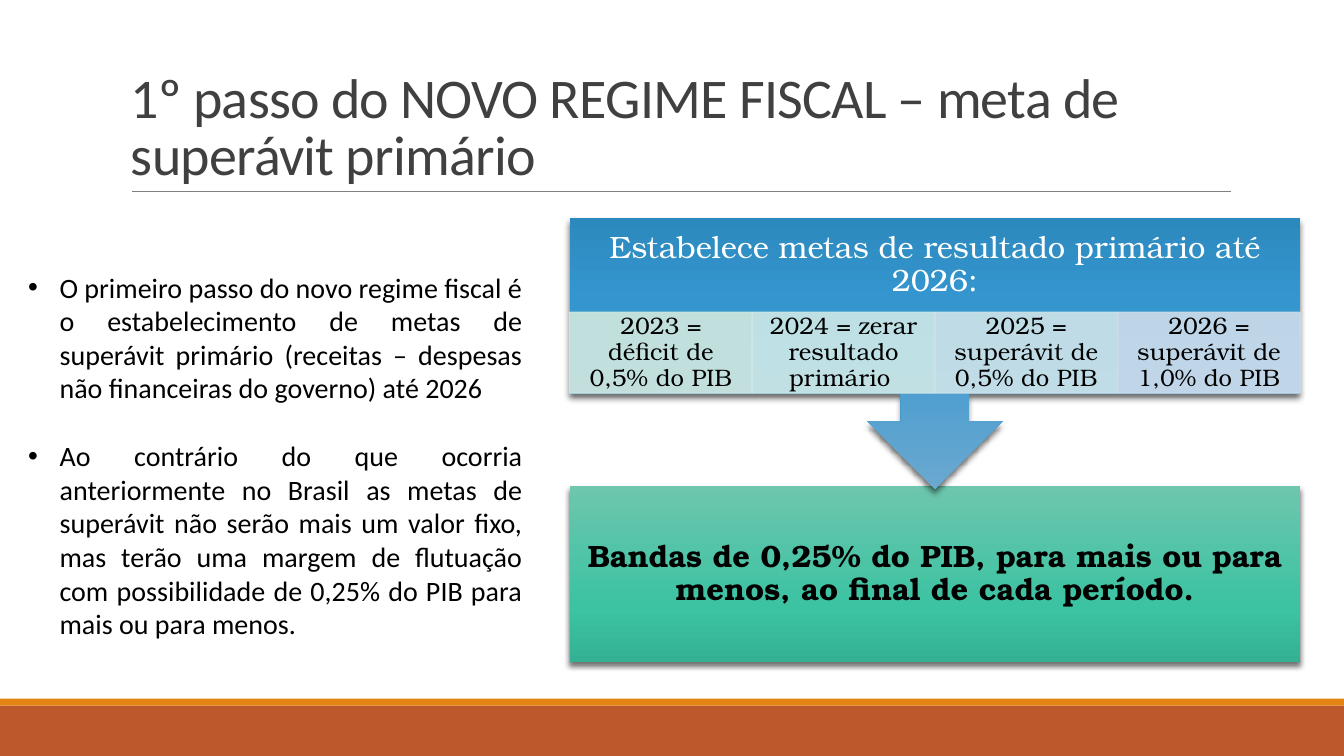
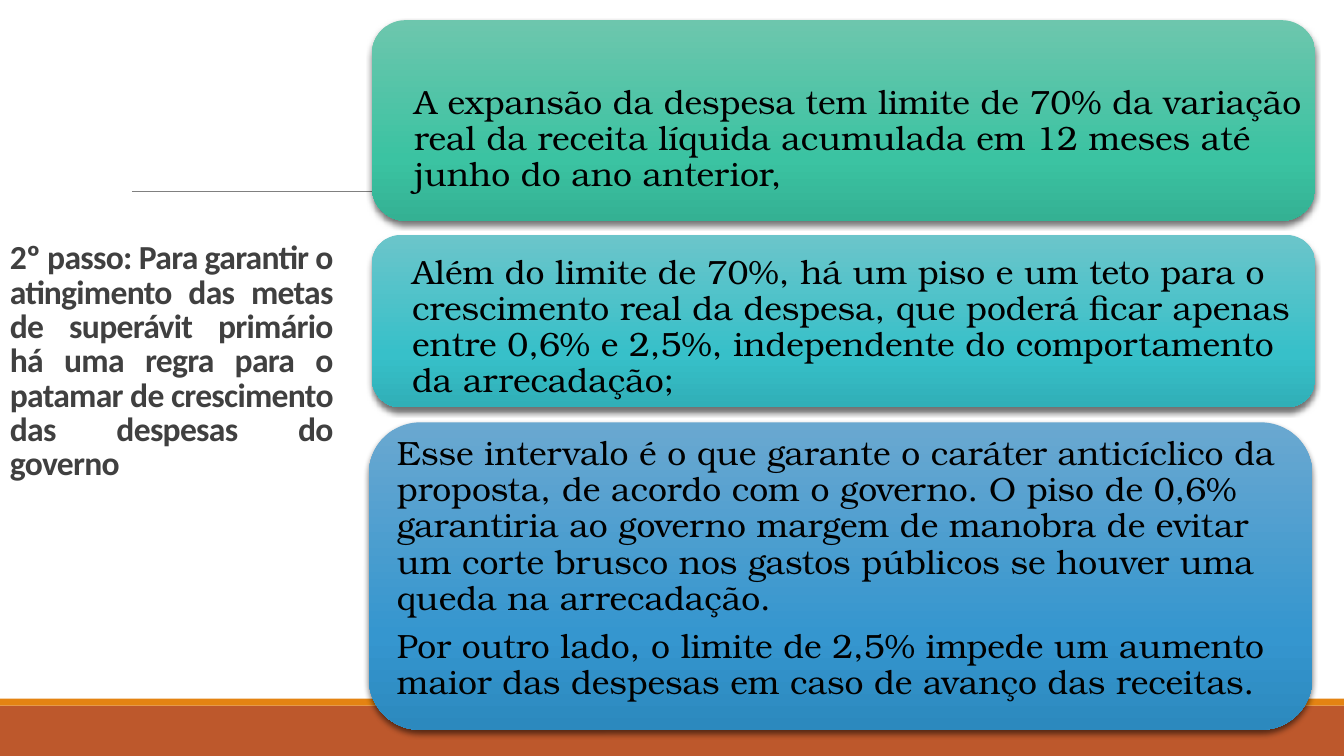
from dataclasses import dataclass

from lxml.etree import SubElement
from pptx import Presentation
from pptx.dml.color import RGBColor
from pptx.enum.shapes import MSO_CONNECTOR, MSO_SHAPE
from pptx.enum.text import MSO_ANCHOR, PP_ALIGN
from pptx.oxml import parse_xml
from pptx.oxml.ns import nsdecls, qn
from pptx.presentation import Presentation as Deck
from pptx.shapes.autoshape import Shape
from pptx.slide import Slide
from pptx.util import Pt

BODY_FONT = "Calibri"
DIAGRAM_FONT = "TeX Gyre Bonum"

BLACK = RGBColor(0x00, 0x00, 0x00)
WHITE = RGBColor(0xFF, 0xFF, 0xFF)
TITLE_GREY = RGBColor(0x40, 0x40, 0x40)
RULE_GREY = RGBColor(0x80, 0x80, 0x80)
BAND_RUST = RGBColor(0xBD, 0x58, 0x2C)
BAND_ORANGE = RGBColor(0xE4, 0x83, 0x12)

PAGE_WIDTH, PAGE_HEIGHT = 960, 540
GOAL_OPACITY = 90
TEXT_INSETS = (7.2, 3.6, 7.2, 3.6)
PANEL_INSETS = (7.2, 7.2, 7.2, 7.2)
HEADING_INSETS = (12, 12, 12, 12)
GOAL_INSETS = (9.2, 1.5, 9.2, 1.5)

Stops = tuple[tuple[int, RGBColor], ...]


def shaded(light: RGBColor, middle: RGBColor, dark: RGBColor) -> Stops:
    return (0, light), (69, middle), (100, dark)


GREEN = shaded(RGBColor(0x6D, 0xC6, 0xAD), RGBColor(0x3B, 0xC3, 0xA2), RGBColor(0x34, 0xB1, 0x93))
TEAL = shaded(RGBColor(0x6B, 0xC5, 0xCA), RGBColor(0x37, 0xC0, 0xC9), RGBColor(0x30, 0xAF, 0xB7))
BLUE = shaded(RGBColor(0x6A, 0xA8, 0xD0), RGBColor(0x35, 0x96, 0xCF), RGBColor(0x2C, 0x89, 0xBE))
BLUE_UPWARD = tuple((100 - position, color) for position, color in reversed(BLUE))


@dataclass(frozen=True)
class Box:
    left: float
    top: float
    width: float
    height: float


@dataclass(frozen=True)
class Goal:
    text: str
    color: RGBColor


@dataclass(frozen=True)
class Panel:
    frame: Box
    text_frame: Box
    stops: Stops
    texts: tuple[str, ...]


GOALS = (
    Goal("2023 = déficit de 0,5% do PIB", RGBColor(0xCF, 0xE7, 0xDF)),
    Goal("2024 = zerar resultado primário ", RGBColor(0xCD, 0xE8, 0xE7)),
    Goal("2025 = superávit de 0,5% do PIB", RGBColor(0xCD, 0xE3, 0xE9)),
    Goal("2026 = superávit de 1,0% do PIB", RGBColor(0xCD, 0xDC, 0xEB)),
)

STEP_NOTES = (
    "O primeiro passo do novo regime fiscal é o estabelecimento de metas de superávit "
    "primário (receitas – despesas não financeiras do governo) até 2026",
    "Ao contrário do que ocorria anteriormente no Brasil as metas de superávit não serão "
    "mais um valor fixo, mas terão uma margem de flutuação com possibilidade de 0,25% do "
    "PIB para mais ou para menos.",
)

PANELS = (
    Panel(
        Box(265.7, 14.4, 673.9, 143.3), Box(288.7, 35.3, 659.5, 128.9), GREEN,
        ("A expansão da despesa tem limite de 70% da variação real da receita líquida "
         "acumulada em 12 meses até junho do ano anterior,",),
    ),
    Panel(
        Box(265.7, 167.8, 673.9, 123.1), Box(287.3, 178.6, 661.7, 110.9), TEAL,
        ("Além do limite de 70%, há um piso e um teto para o crescimento real da despesa, "
         "que poderá ficar apenas entre 0,6% e 2,5%, independente do comportamento da "
         "arrecadação;",),
    ),
    Panel(
        Box(263.5, 301.7, 673.9, 219.6), Box(276.5, 307.4, 652.3, 198), BLUE,
        ("Esse intervalo é o que garante o caráter anticíclico da proposta, de acordo com o "
         "governo. O piso de 0,6% garantiria ao governo margem de manobra de evitar um corte "
         "brusco nos gastos públicos se houver uma queda na arrecadação.",
         "Por outro lado, o limite de 2,5% impede um aumento maior das despesas em caso de "
         "avanço das receitas."),
    ),
)


def write_text(
    shape: Shape,
    *texts: str,
    size: float,
    font: str = DIAGRAM_FONT,
    color: RGBColor = BLACK,
    bold: bool = False,
    align: PP_ALIGN = PP_ALIGN.LEFT,
    anchor: MSO_ANCHOR = MSO_ANCHOR.MIDDLE,
    insets: tuple[float, float, float, float] = TEXT_INSETS,
    line_spacing: float = 0.9,
    gap: float = 0,
    tracking: float = 0,
    bullet_indent: float = 0,
) -> None:
    """Write one paragraph per text, with gap points between paragraphs."""
    frame = shape.text_frame
    frame.word_wrap = True
    frame.vertical_anchor = anchor
    frame.margin_left, frame.margin_top, frame.margin_right, frame.margin_bottom = map(Pt, insets)
    for index, text in enumerate(texts):
        para = frame.add_paragraph() if index else frame.paragraphs[0]
        para.alignment = align
        para.line_spacing = line_spacing
        para.space_before = Pt(gap if index else 0)
        if bullet_indent:
            properties = para._p.get_or_add_pPr()
            properties.set("marL", str(Pt(bullet_indent)))
            properties.set("indent", str(-Pt(bullet_indent)))
            SubElement(properties, qn("a:buFont"), typeface="Arial")
            SubElement(properties, qn("a:buChar"), char="•")
        span = para.add_run()
        span.text = text
        span.font.name = font
        span.font.size = Pt(size)
        span.font.bold = bold
        span.font.color.rgb = color
        if tracking:
            span.font._element.set("spc", str(round(tracking * 100)))


def place(box: Box) -> tuple[Pt, Pt, Pt, Pt]:
    return Pt(box.left), Pt(box.top), Pt(box.width), Pt(box.height)


def add_text(page: Slide, box: Box, *texts: str, **text_format) -> None:
    write_text(page.shapes.add_textbox(*place(box)), *texts, **text_format)


def add_plain_shape(page: Slide, kind: MSO_SHAPE, box: Box) -> Shape:
    """Add a shape without line or shadow."""
    shape = page.shapes.add_shape(kind, *place(box))
    shape.shadow.inherit = False
    shape.line.fill.background()
    return shape


def add_band(page: Slide, box: Box, color: RGBColor) -> None:
    band = add_plain_shape(page, MSO_SHAPE.RECTANGLE, box)
    band.fill.solid()
    band.fill.fore_color.rgb = color


def add_shaded_shape(
    page: Slide, kind: MSO_SHAPE, box: Box, stops: Stops, adjustments: tuple[float, ...] = ()
) -> Shape:
    """Add a shape with a downward gradient and a soft shadow beneath it."""
    shape = add_plain_shape(page, kind, box)
    for index, value in enumerate(adjustments):
        shape.adjustments[index] = value
    stop_xml = "".join(
        f'<a:gs pos="{position * 1000}"><a:srgbClr val="{color}"/></a:gs>'
        for position, color in stops
    )
    gradient = parse_xml(
        f'<a:gradFill {nsdecls("a")} rotWithShape="1"><a:gsLst>{stop_xml}</a:gsLst>'
        '<a:lin ang="5400000" scaled="0"/></a:gradFill>'
    )
    properties = shape._element.spPr
    properties.find(qn("a:prstGeom")).addnext(gradient)
    properties.find(qn("a:effectLst")).append(parse_xml(
        f'<a:outerShdw {nsdecls("a")} blurRad="{Pt(4)}" dist="{Pt(3)}" dir="5400000" '
        'rotWithShape="0"><a:srgbClr val="000000"><a:alpha val="54000"/></a:srgbClr>'
        '</a:outerShdw>'
    ))
    return shape


def add_goal(page: Slide, box: Box, goal: Goal) -> None:
    cell = add_plain_shape(page, MSO_SHAPE.RECTANGLE, box)
    cell.line.width = Pt(1)
    for fill in (cell.fill, cell.line.fill):
        fill.solid()
        fill.fore_color.rgb = goal.color
    for color in cell._element.spPr.iter(qn("a:srgbClr")):
        SubElement(color, qn("a:alpha"), val=str(GOAL_OPACITY * 1000))
    write_text(cell, goal.text, size=17, align=PP_ALIGN.CENTER, insets=GOAL_INSETS)


def add_title(page: Slide, box: Box, text: str, **text_format) -> None:
    add_text(page, box, text, font=BODY_FONT, color=TITLE_GREY, line_spacing=0.85,
             tracking=-0.5, **text_format)


def add_page(deck: Deck) -> Slide:
    """Add a blank page with the footer bands and the title rule."""
    page = deck.slides.add_slide(deck.slide_layouts[6])
    add_band(page, Box(0, 504, PAGE_WIDTH, 36), BAND_RUST)
    add_band(page, Box(0, 499, PAGE_WIDTH, 5), BAND_ORANGE)
    rule = page.shapes.add_connector(
        MSO_CONNECTOR.STRAIGHT, Pt(94.3), Pt(136.8), Pt(879.1), Pt(136.8)
    )
    rule.line.color.rgb = RULE_GREY
    rule.line.width = Pt(0.5)
    SubElement(rule._element.spPr, qn("a:effectLst"))
    return page


def build_first_step(deck: Deck) -> None:
    page = add_page(deck)
    add_title(page, Box(86.4, 22.3, 792, 114.5),
              "1º passo do NOVO REGIME FISCAL – meta de superávit primário",
              size=40, anchor=MSO_ANCHOR.BOTTOM)

    left, width = 406.8, 522
    margin = add_shaded_shape(page, MSO_SHAPE.RECTANGLE, Box(left, 347, width, 126), GREEN)
    write_text(margin, "Bandas de 0,25% do PIB, para mais ou para menos, ao final de cada período.",
               size=22, bold=True, align=PP_ALIGN.CENTER, insets=HEADING_INSETS)
    add_shaded_shape(page, MSO_SHAPE.DOWN_ARROW_CALLOUT, Box(left, 155.5, width, 193.7),
                     BLUE_UPWARD, (0.25, 0.25, 0.25, 0.65))
    add_text(page, Box(left, 155.5, width, 67.7),
             "Estabelece metas de resultado primário até 2026:",
             size=22, color=WHITE, align=PP_ALIGN.CENTER, insets=HEADING_INSETS)
    goal_width = width / len(GOALS)
    for column, goal in enumerate(GOALS):
        add_goal(page, Box(left + column * goal_width, 223.2, goal_width, 57.6), goal)

    add_text(page, Box(13, 189.4, 367.2, 273.6), *STEP_NOTES, size=20, font=BODY_FONT,
             align=PP_ALIGN.JUSTIFY, anchor=MSO_ANCHOR.TOP, line_spacing=1.0,
             gap=24.4, bullet_indent=22.5)


def build_second_step(deck: Deck) -> None:
    page = add_page(deck)
    add_title(page, Box(0, 38.2, 244.8, 441.4),
              "2º passo: Para garantir o atingimento das metas de superávit primário há uma "
              "regra para o patamar de crescimento das despesas do governo",
              size=24, bold=True, align=PP_ALIGN.JUSTIFY)
    for panel in PANELS:
        add_shaded_shape(page, MSO_SHAPE.ROUNDED_RECTANGLE, panel.frame, panel.stops, (0.167,))
        add_text(page, panel.text_frame, *panel.texts, size=24, insets=PANEL_INSETS, gap=8.4)


def main() -> None:
    deck = Presentation()
    deck.slide_width, deck.slide_height = Pt(PAGE_WIDTH), Pt(PAGE_HEIGHT)
    build_first_step(deck)
    build_second_step(deck)
    deck.save("out.pptx")


if __name__ == "__main__":
    main()
